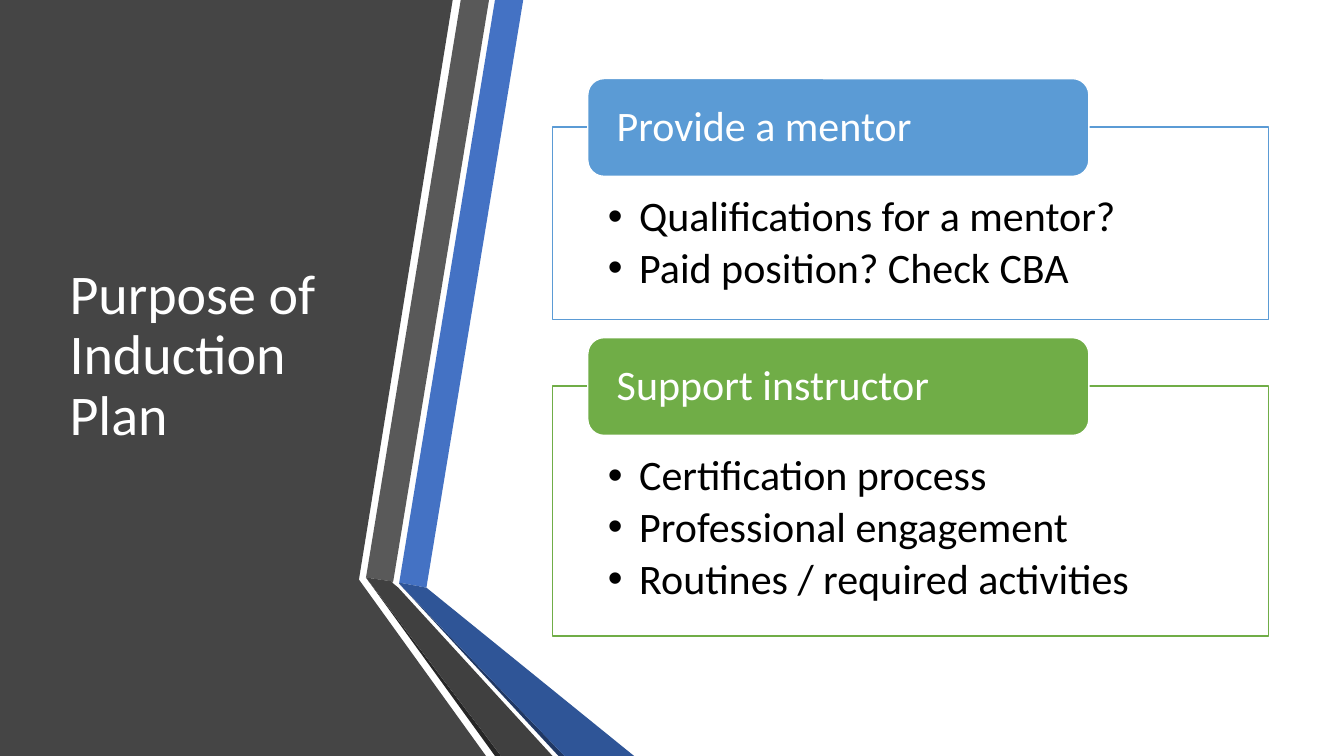
from pptx import Presentation
from pptx.dml.color import RGBColor as RGB
from pptx.enum.shapes import MSO_SHAPE as Shape
from pptx.enum.text import MSO_ANCHOR as Anchor, MSO_AUTO_SIZE as Auto, PP_ALIGN as Align
from pptx.util import Pt

PX = 9144  # EMU per px, 100 px to the inch
HUE = {
    "white": "FFFFFF", "black": "000000", "panel": "454545",
    "blue": "4472C4", "navy": "2F5597", "deep": "203864",
    "grey": "595959", "dark": "404040", "edge": "262626",
    "sky": "5B9BD5", "green": "70AD47",
}
BANDS = [
    ("panel", [(0, 0), (449, 0), (356, 575), (482, 750), (0, 750)]),
    ("blue", [(396, 578), (423, 583), (519, 0), (491, 0)]),
    ("grey", [(485, 0), (457, 0), (363, 573), (390, 577)]),
    ("edge", [(363, 573), (491, 750), (497, 750)]),
    ("deep", [(396, 579), (554, 750), (560, 750)]),
    ("navy", [(396, 579), (560, 750), (629, 750), (423, 583), (396, 578)]),
    ("dark", [(548, 750), (395, 583), (389, 578), (390, 577), (363, 573), (497, 750)]),
]
CARDS = [
    ("sky", 126, 191, "Provide a mentor",
     ["Qualifications for a mentor?", "Paid position? Check CBA"]),
    ("green", 383, 248, "Support instructor",
     ["Certification process", "Professional engagement", "Routines / required activities"]),
]


def rgb(name):
    return RGB.from_string(HUE[name])


def put(item, values):
    for key, value in values.items():
        setattr(item, key, value)


def place(shape, box):
    put(shape, dict(zip(("left", "top", "width", "height"), (n * PX for n in box))))


def paint(shape, fill, line=None):
    shape.fill.solid()
    shape.fill.fore_color.rgb = rgb(fill)
    if line:
        shape.line.color.rgb = rgb(line)
        shape.line.width = Pt(1)
    else:
        shape.line.fill.background()


def write(shape, lines, size, color, inset, anchor, after=0):
    frame = shape.text_frame
    sides = ("margin_left", "margin_top", "margin_right", "margin_bottom")
    put(frame, {"word_wrap": True, "auto_size": Auto.NONE, "vertical_anchor": anchor,
                "text": "\n".join(lines), **dict(zip(sides, (n * PX for n in inset)))})
    for para in frame.paragraphs:
        put(para, {"alignment": Align.LEFT, "line_spacing": 0.9,
                   "space_before": Pt(0), "space_after": Pt(after)})
        put(para.runs[0].font, {"name": "Calibri", "size": Pt(size)})
        para.runs[0].font.color.rgb = rgb(color)


# Dark panel and folded ribbons
def draw_bands(slide):
    for color, points in BANDS:
        pen = slide.shapes.build_freeform(*points[0], scale=PX)
        pen.add_line_segments(points[1:], close=True)
        band = pen.convert_to_shape()
        band.shadow.inherit = False
        paint(band, color)


# Title, raised above the panel
def set_title(slide, box):
    title = slide.shapes.title
    place(title, box)
    write(title, ["Purpose of Induction Plan"], 40, "white", (10, 5, 10, 5), Anchor.MIDDLE)
    slide.shapes._spTree.append(title._element)


# Outlined list with a heading tab across its top edge
def draw_card(slide, body, box, color, head, items):
    left, top, wide, _ = box
    place(body, box)
    paint(body, "white", color)
    write(body, items, 30, "black", (55, 68, 55, 23), Anchor.TOP, 4.5)
    for para in body.text_frame.paragraphs:
        props = para._p.get_or_add_pPr()
        props.set("marL", str(31 * PX))
        props.set("indent", str(-31 * PX))

    tall = 97
    tab = slide.shapes.add_shape(Shape.ROUNDED_RECTANGLE, 0, 0, 0, 0)
    place(tab, (left + 35, top - tall // 2, wide * 7 // 10, tall))
    tab.shadow.inherit = False
    paint(tab, color, "white")
    write(tab, [head], 30, "white", (24, 5, 24, 5), Anchor.MIDDLE)


def main():
    deck = Presentation()
    put(deck, {"slide_width": 1333 * PX, "slide_height": 750 * PX})
    slide = deck.slides.add_slide(deck.slide_layouts[3])
    draw_bands(slide)
    set_title(slide, (59, 75, 304, 558))
    for spot, (color, top, tall, head, items) in enumerate(CARDS, 1):
        draw_card(slide, slide.placeholders[spot], (548, top, 710, tall), color, head, items)
    deck.save("out.pptx")


if __name__ == "__main__":
    main()
